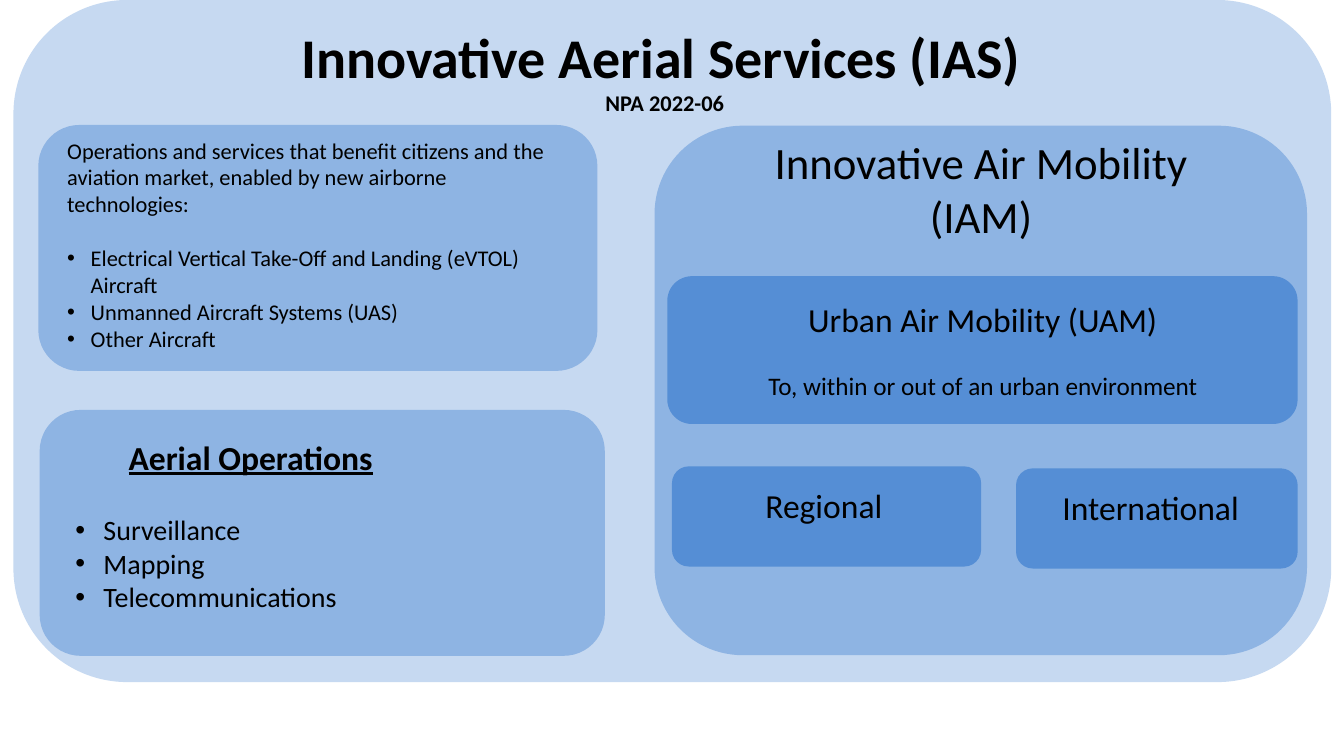
from pptx import Presentation
from pptx.dml.color import RGBColor
from pptx.enum.shapes import MSO_SHAPE
from pptx.enum.text import MSO_ANCHOR, MSO_AUTO_SIZE, PP_ALIGN
from pptx.oxml.ns import qn
from pptx.util import Emu, Pt
from lxml import etree

ROUND = MSO_SHAPE.ROUNDED_RECTANGLE
TOP, MIDDLE = MSO_ANCHOR.TOP, MSO_ANCHOR.MIDDLE
FIXED = MSO_AUTO_SIZE.NONE
LEFT, CENTER = PP_ALIGN.LEFT, PP_ALIGN.CENTER

PALE = RGBColor(0xC6, 0xD9, 0xF1)
LIGHT = RGBColor(0x8E, 0xB4, 0xE3)
BLUE = RGBColor(0x55, 0x8E, 0xD5)
BLACK = RGBColor(0, 0, 0)

FONT = "Calibri"
SCALE = 9144
INSET = 13


def px(n):
    return Emu(n * SCALE)


def panel(slide, box, fill):
    shape = slide.shapes.add_shape(ROUND, *map(px, box))
    shape.shadow.inherit = False
    shape.fill.solid()
    shape.fill.fore_color.rgb = fill
    shape.line.fill.background()
    return shape


def setup(frame, anchor=TOP):
    frame.word_wrap = True
    frame.auto_size = FIXED
    frame.vertical_anchor = anchor
    frame.margin_left = frame.margin_right = px(INSET)
    frame.margin_top = frame.margin_bottom = px(INSET)
    return frame


def label(slide, box, anchor=TOP):
    return setup(slide.shapes.add_textbox(*map(px, box)).text_frame, anchor)


def write(frame, text, size, align=LEFT, bold=False, line=False, gap=0, hang=0):
    para = frame.paragraphs[0]
    if para.runs:
        para = frame.add_paragraph()
    para.alignment = align
    if gap:
        para.space_before = Pt(gap)
    if hang:
        props = para._p.get_or_add_pPr()
        props.set("marL", str(px(hang)))
        props.set("indent", str(-px(hang)))
        etree.SubElement(props, qn("a:buFont")).set("typeface", "Arial")
        etree.SubElement(props, qn("a:buChar")).set("char", "•")
    run = para.add_run()
    run.text = text
    font = run.font
    font.name = FONT
    font.size = Pt(size)
    font.bold = bold
    font.underline = line
    font.color.rgb = BLACK


def bullets(frame, items, size, hang, gap):
    for i, item in enumerate(items):
        write(frame, item, size, hang=hang, gap=0 if i else gap)


def header(slide, box):
    x, y, w, h = box
    base = panel(slide, box, PALE)
    title = slide.shapes.title
    title.left, title.top = px(x + 383), px(y + 20)
    title.width, title.height = px(1180), px(125)
    base.element.addnext(title.element)
    frame = setup(title.text_frame)
    write(frame, "Innovative Aerial Services (IAS) ", 60, CENTER, bold=True)
    write(frame, "NPA 2022-06 ", 24, CENTER, bold=True)


def services(slide, box):
    x, y, w, h = box
    panel(slide, box, LIGHT)
    frame = label(slide, (x + 30, y - 20, 738, 395), MIDDLE)
    write(frame, "Operations and services that benefit citizens and the "
          "aviation market, enabled by new airborne technologies:", 24)
    bullets(frame, ("Electrical Vertical Take-Off and Landing (eVTOL) Aircraft",
                    "Unmanned Aircraft Systems (UAS)",
                    "Other Aircraft"), 24, 35, 29)


def aerial(slide, box):
    x, y, w, h = box
    panel(slide, box, LIGHT)
    frame = label(slide, (x + 40, y + 27, 548, 300))
    write(frame, "Aerial Operations", 36, CENTER, bold=True, line=True)
    bullets(frame, ("Surveillance", "Mapping", "Telecommunications"), 30, 42, 38)


def urban(slide, box):
    x, y, w, h = box
    panel(slide, box, BLUE)
    frame = label(slide, (x + 85, y + 21, 769, 160))
    write(frame, "Urban Air Mobility (UAM)", 36, CENTER)
    write(frame, "To, within or out of an urban environment", 27, CENTER, gap=33)


def range_card(slide, box, text, shift):
    x, y, w, h = box
    panel(slide, box, BLUE)
    write(label(slide, (x + shift, y + 14, w - shift, 100)), text, 36)


def mobility(slide, box):
    x, y, w, h = box
    panel(slide, box, LIGHT)
    frame = label(slide, (x + 152, y + 1, 668, 180))
    write(frame, "Innovative Air Mobility (IAM)", 48, CENTER)
    urban(slide, (x + 19, y + 224, 938, 220))
    range_card(slide, (x + 26, y + 507, 460, 149), "Regional", 126)
    range_card(slide, (x + 538, y + 510, 419, 149), "International", 56)


def main():
    deck = Presentation()
    deck.slide_width, deck.slide_height = px(2000), px(1125)
    slide = deck.slides.add_slide(deck.slide_layouts[5])
    header(slide, (20, 0, 1961, 1015))
    aerial(slide, (59, 610, 841, 366))
    mobility(slide, (974, 187, 971, 788))
    services(slide, (57, 186, 832, 366))
    deck.save("out.pptx")


if __name__ == "__main__":
    main()
